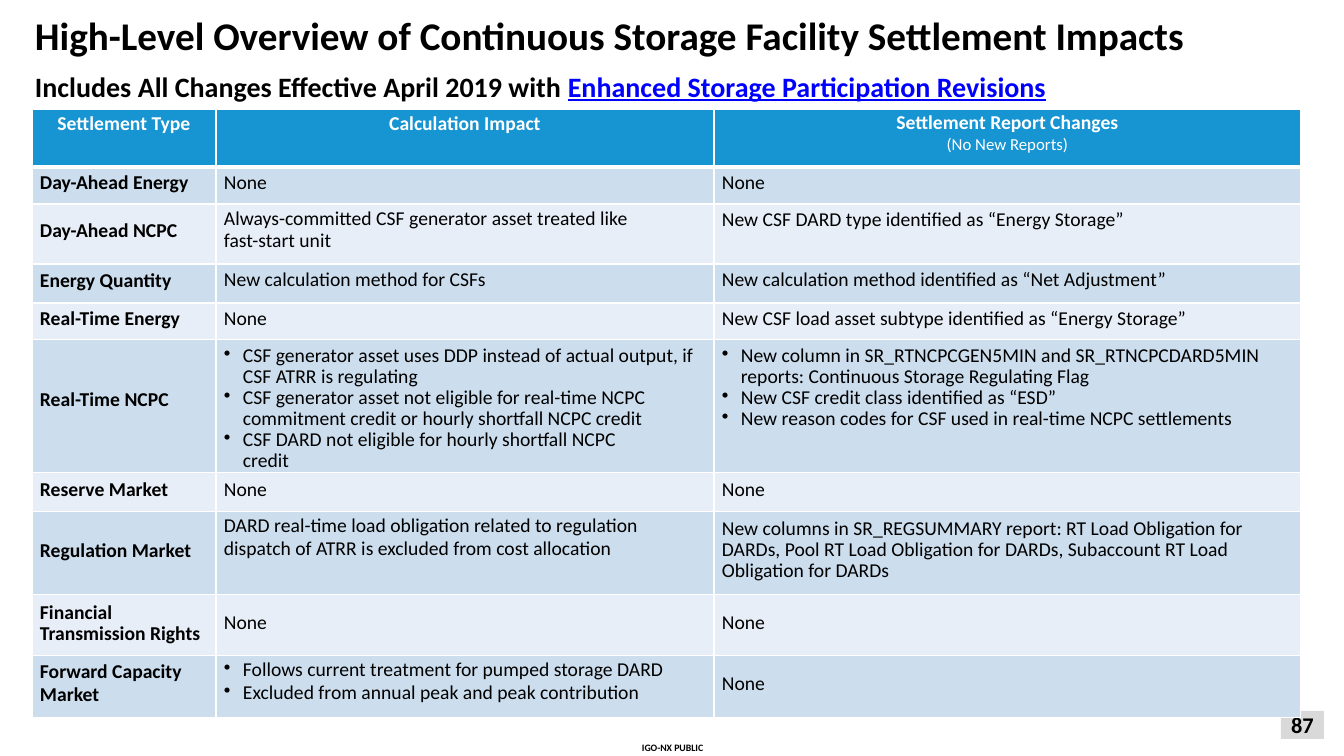
from lxml.etree import SubElement
from pptx import Presentation
from pptx.dml.color import RGBColor
from pptx.enum.shapes import MSO_SHAPE
from pptx.enum.text import MSO_ANCHOR, PP_ALIGN
from pptx.oxml.ns import qn
from pptx.util import Pt

PX = 914400 / 100.8
BLACK = RGBColor(0x00, 0x00, 0x00)
WHITE = RGBColor(0xFF, 0xFF, 0xFF)
LINK_BLUE = RGBColor(0x00, 0x00, 0xFF)
HEADER_BLUE = RGBColor(0x17, 0x94, 0xD2)
BAND_DARK = RGBColor(0xCC, 0xDD, 0xED)
BAND_LIGHT = RGBColor(0xE7, 0xEE, 0xF7)
GREY = RGBColor(0xD9, 0xD9, 0xD9)


def px(n):
    return round(n * PX)


def style(p, size, color, bold):
    for r in p.runs:
        r.font.name = "Calibri"
        r.font.size = Pt(size)
        r.font.color.rgb = color
        r.font.bold = bold


prs = Presentation()
prs.slide_width, prs.slide_height = px(1344), px(756)
s = prs.slides.add_slide(prs.slide_layouts[6])

# Title, subtitle and footer
LINK = "Enhanced Storage Participation Revisions"
texts = [
    (35, 11, 1250, 50, 28, ["High-Level Overview of Continuous Storage Facility Settlement Impacts"]),
    (35, 69, 1100, 36, 20, ["Includes All Changes Effective April 2019 with ", LINK]),
    (642, 742, 80, 12, 7, ["IGO-NX PUBLIC"]),
]
for left, top, width, height, size, parts in texts:
    tf = s.shapes.add_textbox(px(left), px(top), px(width), px(height)).text_frame
    tf.word_wrap = True
    tf.margin_left = tf.margin_right = tf.margin_top = tf.margin_bottom = 0
    p = tf.paragraphs[0]
    for part in parts:
        p.add_run().text = part
    style(p, size, BLACK, True)
    for r in p.runs:
        if r.text == LINK:
            r.font.color.rgb = LINK_BLUE
            r.font.underline = True

# Page number, partly behind the table
sp = s.shapes.add_shape(MSO_SHAPE.RECTANGLE, px(1281), px(711), px(43), px(28))
sp.shadow.inherit = False
sp.fill.solid()
sp.fill.fore_color.rgb = GREY
sp.line.fill.background()
tf = sp.text_frame
tf.margin_left = tf.margin_right = tf.margin_top = tf.margin_bottom = 0
tf.vertical_anchor = MSO_ANCHOR.MIDDLE
tf.text = "87"
tf.paragraphs[0].alignment = PP_ALIGN.CENTER
style(tf.paragraphs[0], 16, BLACK, True)

# Table rows: height, then cells of (top margin, line spacing in points, paragraphs)
rows = [
    (58, [(3, None, ["Settlement Type"]),
          (3, None, ["Calculation Impact"]),
          (2, None, ["Settlement Report Changes", "(No New Reports)"])]),
    (37, [(4, None, ["Day-Ahead Energy"]), (4, None, ["None"]), (4, None, ["None"])]),
    (60, [(15, None, ["Day-Ahead NCPC"]),
          (4, 15.9, ["Always-committed CSF generator asset treated like", "fast-start unit"]),
          (4, None, ["New CSF DARD type identified as “Energy Storage”"])]),
    (39, [(5, None, ["Energy Quantity"]),
          (4, None, ["New calculation method for CSFs"]),
          (4, None, ["New calculation method identified as “Net Adjustment”"])]),
    (37, [(4, None, ["Real-Time Energy"]),
          (4, None, ["None"]),
          (4, None, ["New CSF load asset subtype identified as “Energy Storage”"])]),
    (132, [(48, None, ["Real-Time NCPC"]),
           (7, 15, ["• CSF generator asset uses DDP instead of actual output, if\vCSF ATRR is regulating",
                    "• CSF generator asset not eligible for real-time NCPC\v"
                    "commitment credit or hourly shortfall NCPC credit",
                    "• CSF DARD not eligible for hourly shortfall NCPC\vcredit"]),
           (7, 15, ["• New column in SR_RTNCPCGEN5MIN and SR_RTNCPCDARD5MIN\v"
                    "reports: Continuous Storage Regulating Flag",
                    "• New CSF credit class identified as “ESD”",
                    "• New reason codes for CSF used in real-time NCPC settlements"])]),
    (39, [(5, None, ["Reserve Market"]), (5, None, ["None"]), (5, None, ["None"])]),
    (83, [(27, None, ["Regulation Market"]),
          (4, 15.9, ["DARD real-time load obligation related to regulation",
                     "dispatch of ATRR is excluded from cost allocation"]),
          (8, 15, ["New columns in SR_REGSUMMARY report: RT Load Obligation for\v"
                   "DARDs, Pool RT Load Obligation for DARDs, Subaccount RT Load\v"
                   "Obligation for DARDs"])]),
    (61, [(9, 15, ["Financial\vTransmission Rights"]), (16, None, ["None"]), (16, None, ["None"])]),
    (62, [(6, 15.9, ["Forward Capacity", "Market"]),
          (4, 15.9, ["• Follows current treatment for pumped storage DARD",
                     "• Excluded from annual peak and peak contribution"]),
          (16, None, ["None"])]),
]
widths = [184, 498, 587]
height = sum(h for h, cells in rows)
table = s.shapes.add_table(len(rows), 3, px(32), px(109), px(sum(widths)), px(height)).table
table.first_row = table.horz_banding = False
for col, width in zip(table.columns, widths):
    col.width = px(width)

for i, (h, cells) in enumerate(rows):
    table.rows[i].height = px(h)
    fill = HEADER_BLUE if i == 0 else BAND_DARK if i % 2 else BAND_LIGHT
    for j, (top, spacing, lines) in enumerate(cells):
        cell = table.cell(i, j)
        cell.margin_left = 0 if i == 0 else px(8)
        cell.margin_right = cell.margin_bottom = 0
        cell.margin_top = px(top)

        # White borders, heavier under the header
        tcPr = cell._tc.get_or_add_tcPr()
        for side in ("L", "R", "T", "B"):
            heavy = (i, side) in ((0, "B"), (1, "T"))
            ln = SubElement(tcPr, qn("a:ln" + side), w=str(Pt(3 if heavy else 1)))
            SubElement(SubElement(ln, qn("a:solidFill")), qn("a:srgbClr"), val=str(WHITE))
        cell.fill.solid()
        cell.fill.fore_color.rgb = fill

        # Cell text
        tf = cell.text_frame
        for k, line in enumerate(lines):
            p = tf.paragraphs[0] if k == 0 else tf.add_paragraph()
            p.text = line.removeprefix("• ")
            if line.startswith("•"):
                pPr = p._p.get_or_add_pPr()
                pPr.set("marL", str(px(19)))
                pPr.set("indent", str(-px(19)))
                SubElement(pPr, qn("a:buChar"), char="•")
            if spacing:
                p.line_spacing = Pt(spacing)
            if i == 0:
                p.alignment = PP_ALIGN.CENTER
                style(p, 12 if k else 14, WHITE, k == 0)
            else:
                style(p, 14, BLACK, j == 0)

prs.save("out.pptx")
